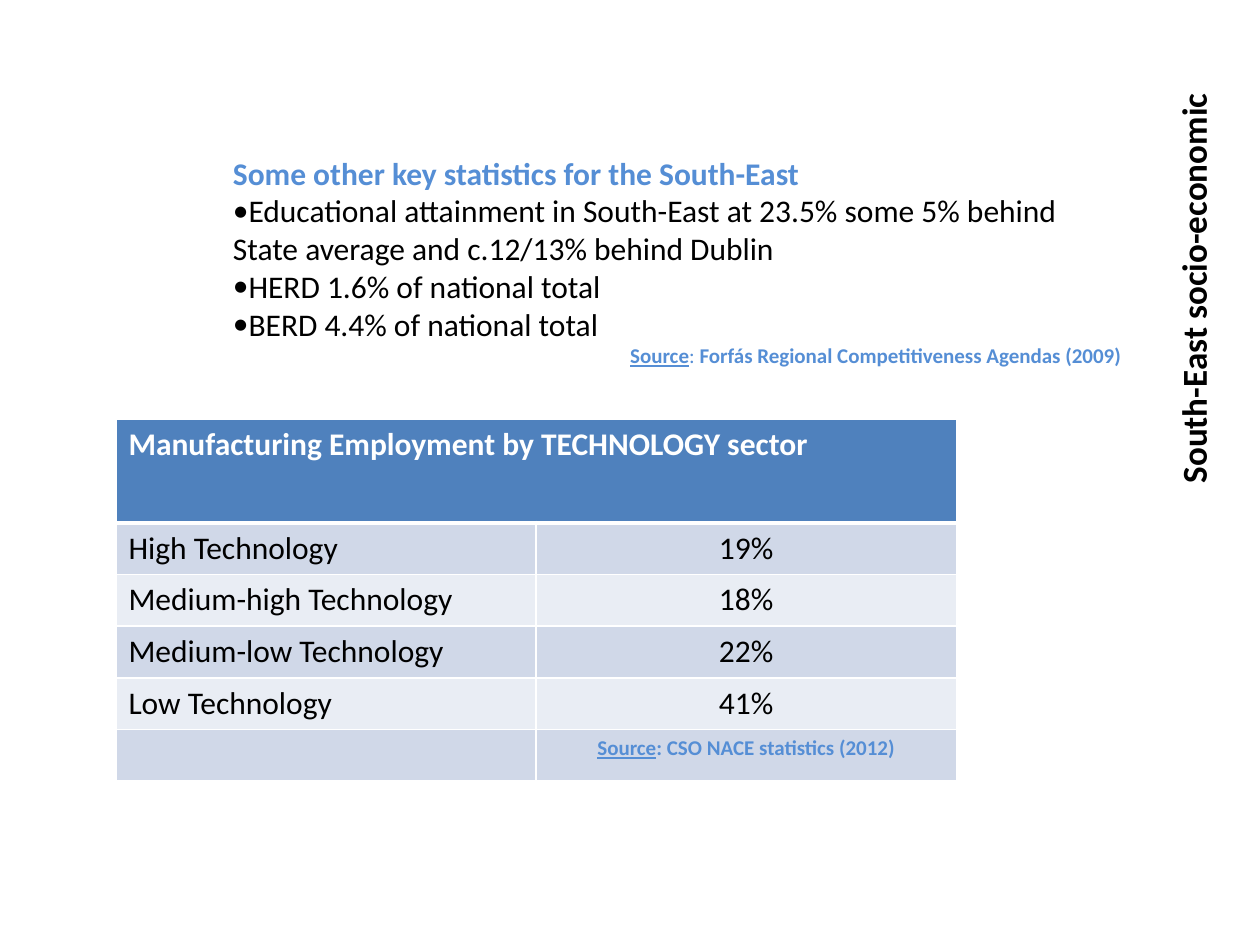
from dataclasses import dataclass

from lxml.etree import SubElement
from pptx import Presentation
from pptx.dml.color import RGBColor
from pptx.enum.text import MSO_ANCHOR, MSO_AUTO_SIZE, PP_ALIGN
from pptx.oxml.ns import qn
from pptx.util import Inches, Pt

LEFT, MID, RIGHT = PP_ALIGN.LEFT, PP_ALIGN.CENTER, PP_ALIGN.RIGHT
TOP = MSO_ANCHOR.TOP
FIXED = MSO_AUTO_SIZE.NONE


@dataclass(frozen=True)
class Theme:
    font: str = "Calibri"
    ink: str = "000000"
    paper: str = "FFFFFF"
    accent: str = "558ED5"
    head: str = "4F81BD"
    bands: tuple[str, str] = ("D0D8E8", "E9EDF4")
    title: int = 20
    body: int = 18
    note: int = 12


THEME = Theme()


@dataclass(frozen=True)
class Run:
    text: str
    size: int = THEME.body
    color: str = THEME.ink
    bold: bool = False
    underline: bool = False


@dataclass(frozen=True)
class Para:
    runs: tuple[Run, ...]
    align: PP_ALIGN = LEFT
    bullet: bool = False


def note(text: str, bold: bool = True, underline: bool = False) -> Run:
    return Run(text, THEME.note, THEME.accent, bold, underline)


def write(frame, paras: list[Para]) -> None:
    """Fill a text frame with formatted paragraphs."""
    for i, para in enumerate(paras):
        line = frame.paragraphs[0] if i == 0 else frame.add_paragraph()
        line.alignment = para.align
        if para.bullet:
            props = line._p.get_or_add_pPr()
            SubElement(props, qn("a:buFont"), typeface=THEME.font)
            SubElement(props, qn("a:buChar"), char="•")
        for part in para.runs:
            run = line.add_run()
            run.text = part.text
            form = {"name": THEME.font, "size": Pt(part.size),
                    "bold": part.bold, "underline": part.underline}
            for key, value in form.items():
                setattr(run.font, key, value)
            run.font.color.rgb = RGBColor.from_string(part.color)


def place(shape, left: float, top: float, width: float, height: float,
          turn: float = 0) -> None:
    """Set the box, which is then turned about its centre."""
    box = {"left": left, "top": top, "width": width, "height": height}
    for key, value in box.items():
        setattr(shape, key, Inches(value))
    shape.rotation = turn
    form = {"word_wrap": True, "auto_size": FIXED, "vertical_anchor": TOP}
    for key, value in form.items():
        setattr(shape.text_frame, key, value)


def rule(cell, points: float) -> None:
    """Draw the bottom border of a cell."""
    line = SubElement(cell._tc.get_or_add_tcPr(), qn("a:lnB"),
                      w=str(Pt(points)))
    fill = SubElement(line, qn("a:solidFill"))
    SubElement(fill, qn("a:srgbClr"), val=THEME.paper)


def paint(cell, color: str, para: Para | None) -> None:
    cell.fill.solid()
    cell.fill.fore_color.rgb = RGBColor.from_string(color)
    if para:
        write(cell.text_frame, [para])


FACTS = [
    Para((Run("Some other key statistics for the South-East",
              color=THEME.accent, bold=True),)),
    *(Para((Run(text),), bullet=True) for text in (
        "Educational attainment in South-East at 23.5% some 5% behind "
        "State average and c.12/13% behind Dublin",
        "HERD 1.6% of national total",
        "BERD 4.4% of national total")),
    Para((note("Source", underline=True), note(": ", bold=False),
          note("Forfás Regional Competitiveness Agendas (2009)")), RIGHT),
]
SHARES = [("High Technology", "19%"), ("Medium-high Technology", "18%"),
          ("Medium-low Technology", "22%"), ("Low Technology", "41%")]
ORIGIN = Para((note("Source", underline=True),
               note(": CSO NACE statistics (2012)")), MID)


def add_shares(slide) -> None:
    rows = [(Para((Run(name),)), Para((Run(share),), MID))
            for name, share in SHARES] + [(None, ORIGIN)]
    grid = slide.shapes.add_table(len(rows) + 1, 2, Inches(0.92), Inches(3.33),
                                  Inches(6.67), Inches(2.84)).table
    for i, row in enumerate(grid.rows):
        row.height = Inches(0.41 if i else 0.82)

    # Header across both columns
    grid.cell(0, 0).merge(grid.cell(0, 1))
    head = Run("Manufacturing Employment by TECHNOLOGY sector",
               color=THEME.paper, bold=True)
    for j in range(2):
        rule(grid.cell(0, j), 3)
    paint(grid.cell(0, 0), THEME.head, Para((head,)))

    # Banded rows
    for i, row in enumerate(rows):
        for j, para in enumerate(row):
            paint(grid.cell(i + 1, j), THEME.bands[i % 2], para)


def main() -> None:
    deck = Presentation()
    deck.slide_width, deck.slide_height = Inches(10), Inches(7.5)
    slide = deck.slides.add_slide(deck.slide_layouts[5])

    add_shares(slide)

    # Key statistics
    facts = slide.shapes.add_textbox(0, 0, 0, 0)
    place(facts, 1.75, 1.17, 7.25, 2.32)
    write(facts.text_frame, FACTS)

    # Title turned to run up the right edge
    title = slide.shapes.title
    place(title, 7.73, 2.1, 3.58, 0.54, turn=270)
    write(title.text_frame, [Para((Run("South-East socio-economic ",
                                       THEME.title, bold=True),), RIGHT)])

    deck.save("out.pptx")


if __name__ == "__main__":
    main()
